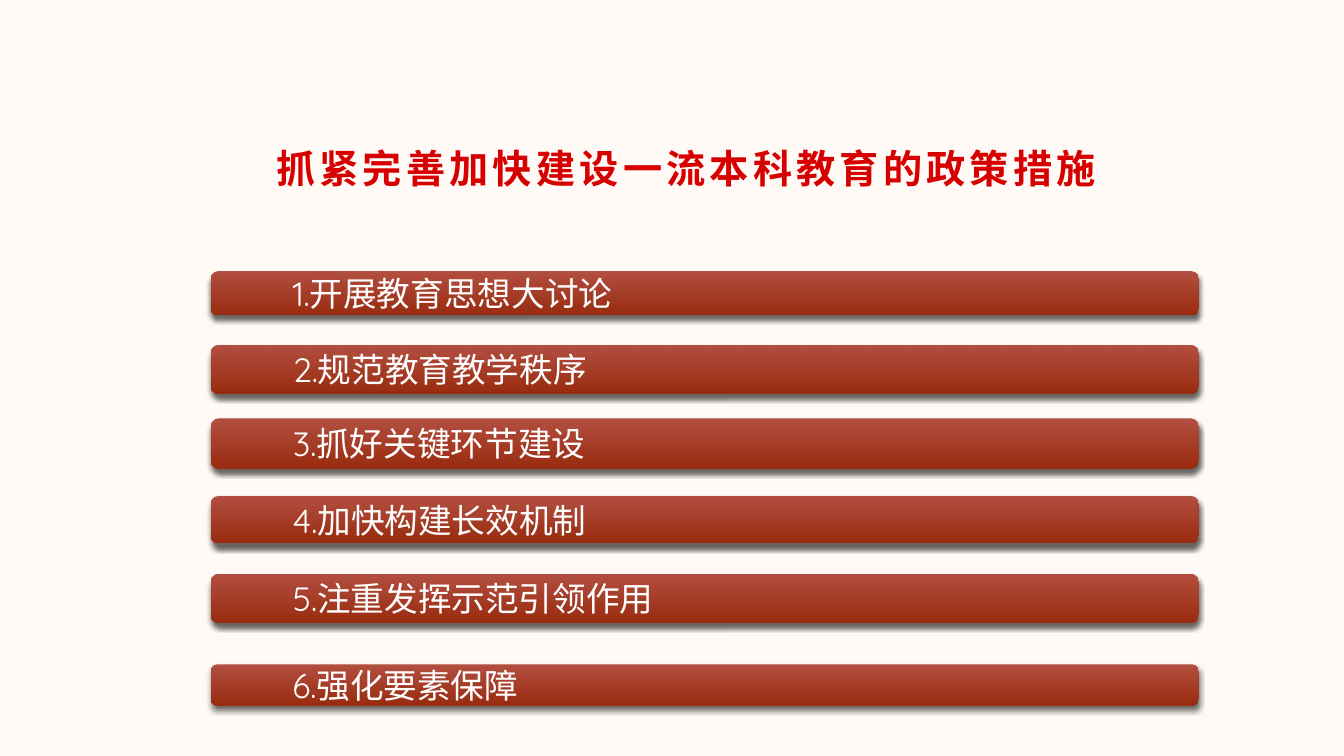
from lxml.etree import SubElement
from pptx import Presentation
from pptx.dml.color import RGBColor
from pptx.enum.shapes import MSO_SHAPE
from pptx.enum.text import MSO_ANCHOR, PP_ALIGN
from pptx.oxml.ns import qn
from pptx.util import Inches, Pt

COLORS = {
    "background": "FFFAF5",
    "title": "D70000",
    "bar_top": "B24E40",
    "bar_bottom": "992C0F",
    "bar_text": "FFFFFF",
    "shadow": "000000",
}
CHINESE_FONT = "Noto Sans CJK SC"
NUMBER_FONT = "Quicksand"
TITLE = "抓紧完善加快建设一流本科教育的政策措施"
BAR_LEFT, BAR_WIDTH = 2.09, 9.8
MEASURES = [
    ("开展教育思想大讨论", 2.69, 0.44),
    ("规范教育教学秩序", 3.42, 0.49),
    ("抓好关键环节建设", 4.15, 0.5),
    ("加快构建长效机制", 4.92, 0.47),
    ("注重发挥示范引领作用", 5.69, 0.49),
    ("强化要素保障", 6.59, 0.41),
]


def color(name):
    return RGBColor.from_string(COLORS[name])


def add_text(para, text, *, size, font, fill, bold=False, spacing=0):
    span = para.add_run()
    span.text = text
    span.font.size = Pt(size)
    span.font.bold = bold
    span.font.name = font
    span.font.color.rgb = color(fill)
    properties = span._r.get_or_add_rPr()
    SubElement(properties, qn("a:ea"), typeface=font)
    if spacing:
        properties.set("spc", str(spacing * 100))


def add_shadow(shape):
    shape.shadow.inherit = False
    effects = shape._element.spPr.find(qn("a:effectLst"))
    shadow = SubElement(effects, qn("a:outerShdw"), blurRad=str(Pt(4)), dist=str(Pt(3)),
                        dir="5400000", algn="t", rotWithShape="0")
    shade = SubElement(shadow, qn("a:srgbClr"), val=COLORS["shadow"])
    SubElement(shade, qn("a:alpha"), val="60000")


def place_title(page, left, top, width, height):
    box = page.shapes.title
    box.left, box.top, box.width, box.height = map(Inches, (left, top, width, height))
    frame = box.text_frame
    frame.word_wrap = True
    frame.vertical_anchor = MSO_ANCHOR.MIDDLE
    para = frame.paragraphs[0]
    para.alignment = PP_ALIGN.LEFT
    add_text(para, TITLE, size=28, font=CHINESE_FONT, fill="title", bold=True, spacing=3)


def place_bar(page, number, text, left, top, width, height):
    bar = page.shapes.add_shape(MSO_SHAPE.ROUNDED_RECTANGLE,
                                *map(Inches, (left, top, width, height)))
    bar.fill.gradient()
    bar.fill.gradient_angle = 270
    for stop, name in zip(bar.fill.gradient_stops, ("bar_top", "bar_bottom")):
        stop.color.rgb = color(name)
    bar.line.fill.background()
    add_shadow(bar)
    frame = bar.text_frame
    frame.word_wrap = True
    frame.vertical_anchor = MSO_ANCHOR.MIDDLE
    frame.margin_left = Inches(0.79)
    para = frame.paragraphs[0]
    para.alignment = PP_ALIGN.LEFT
    add_text(para, f"{number}.", size=24, font=NUMBER_FONT, fill="bar_text")
    add_text(para, text, size=24, font=CHINESE_FONT, fill="bar_text")


def main():
    deck = Presentation()
    deck.slide_width, deck.slide_height = Inches(13.33), Inches(7.5)
    page = deck.slides.add_slide(deck.slide_layouts[5])
    page.background.fill.solid()
    page.background.fill.fore_color.rgb = color("background")
    place_title(page, 2.64, 1.38, 8.96, 0.57)
    for number, (text, top, height) in enumerate(MEASURES, start=1):
        place_bar(page, number, text, BAR_LEFT, top, BAR_WIDTH, height)
    deck.save("out.pptx")


if __name__ == "__main__":
    main()
